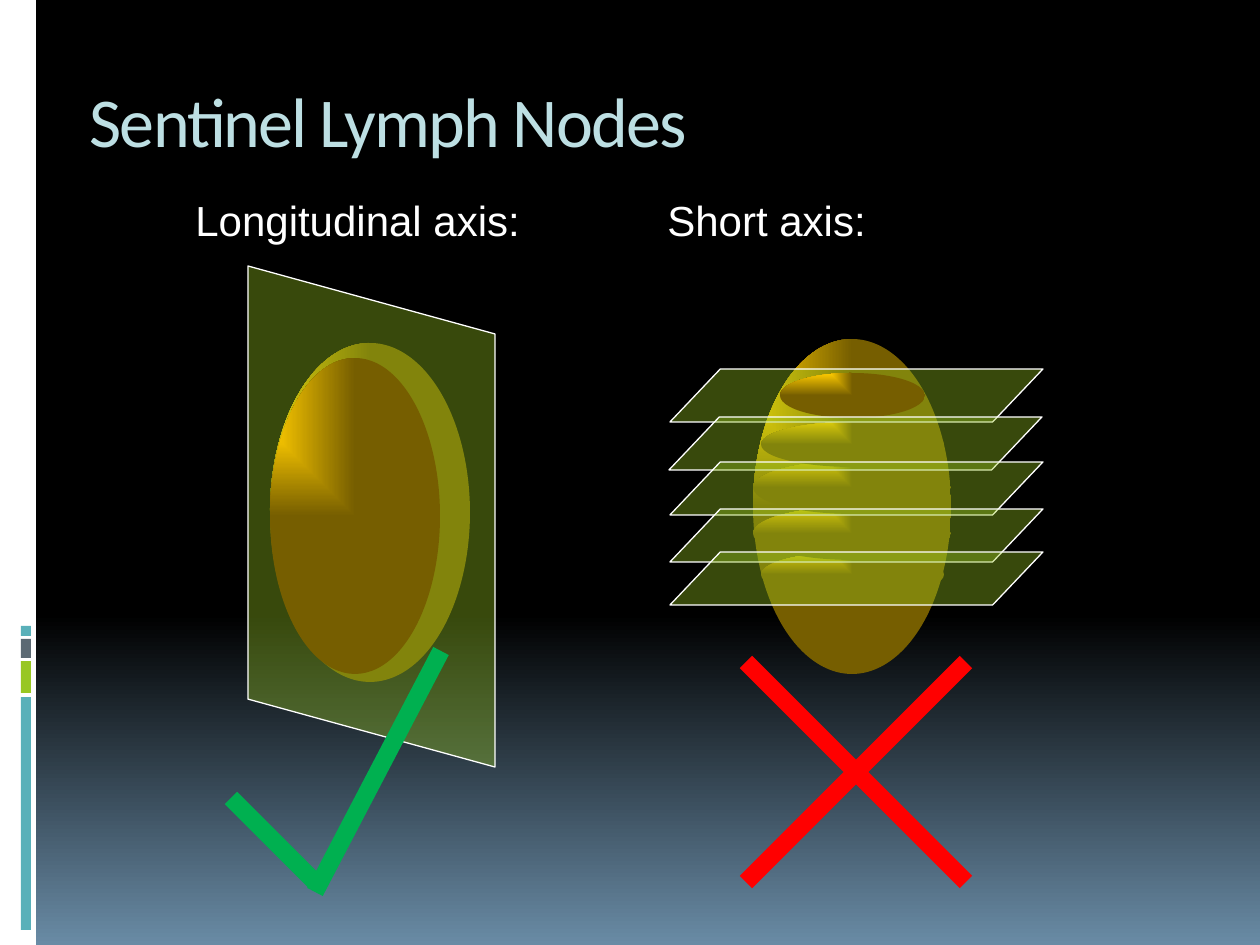
import lxml.etree
import pptx
import pptx.dml.color
import pptx.enum.shapes
import pptx.enum.text
import pptx.oxml.ns
import pptx.util

SCALE = 914400 / 126
SHAPE = pptx.enum.shapes.MSO_SHAPE
ANCHOR = pptx.enum.text.MSO_ANCHOR
AUTO_SIZE = pptx.enum.text.MSO_AUTO_SIZE
qn = pptx.oxml.ns.qn

WHITE, TITLE = "FFFFFF", "BDDFE3"
TEAL, GREEN, GREY = "59B0B9", "98C723", "5B6973"
TICK, CROSS = "00B050", "FF0000"
NODE_STOPS = [(0, "FFCC00"), (100, "765E00")]
SKY_STOPS = [(0, "000000"), (65, "000000"), (100, "698BA5")]


def px(*lengths):
    return [pptx.util.Emu(round(length * SCALE)) for length in lengths]


def colour(value):
    return pptx.dml.color.RGBColor.from_string(value)


def child(parent, tag, **attributes):
    values = {key: str(value) for key, value in attributes.items()}
    return lxml.etree.SubElement(parent, qn(tag), values)


class SlideBuilder:
    """Holds the style and the current slide, and draws each kind of element."""

    def __init__(self, presentation):
        self.slide = presentation.slides.add_slide(presentation.slide_layouts[5])
        self.shapes = self.slide.shapes

    def gradient(self, fill, owner, stops):
        fill.gradient()
        gradient = owner.find(".//" + qn("a:gradFill"))
        for part in list(gradient):
            gradient.remove(part)
        stop_list = child(gradient, "a:gsLst")
        for position, value in stops:
            stop = child(stop_list, "a:gs", pos=position * 1000)
            child(stop, "a:srgbClr", val=value)
        return gradient

    def background(self, stops):
        gradient = self.gradient(self.slide.background.fill, self.slide.element, stops)
        child(gradient, "a:lin", ang=5400000, scaled=0)

    def shape(self, kind, *frame):
        shape = self.shapes.add_shape(kind, *px(*frame))
        shape.shadow.inherit = False
        shape.line.fill.background()
        return shape

    def bar(self, *frame, fill):
        bar = self.shape(SHAPE.RECTANGLE, *frame)
        bar.fill.solid()
        bar.fill.fore_color.rgb = colour(fill)

    def node(self, *frame):
        node = self.shape(SHAPE.OVAL, *frame)
        gradient = self.gradient(node.fill, node.element, NODE_STOPS)
        shading = child(gradient, "a:path", path="rect")
        child(shading, "a:fillToRect", r=100000, b=100000)

    def plane(self, *frame, slant, rotation=0):
        plane = self.shape(SHAPE.PARALLELOGRAM, *frame)
        plane.adjustments[0] = slant
        plane.rotation = rotation
        plane.fill.solid()
        plane.fill.fore_color.rgb = colour(GREEN)
        child(plane.element.find(".//" + qn("a:srgbClr")), "a:alpha", val=37000)
        plane.line.color.rgb = colour(WHITE)
        plane.line.width = pptx.util.Pt(0.75)

    def stroke(self, *ends, fill):
        stroke = self.shapes.add_connector(
            pptx.enum.shapes.MSO_CONNECTOR.STRAIGHT, *px(*ends))
        stroke.line.color.rgb = colour(fill)
        stroke.line.width = pptx.util.Pt(10)
        child(stroke.element.spPr, "a:effectLst")

    def text(self, frame, wording, font, size, fill):
        paragraph = frame.paragraphs[0]
        paragraph.alignment = pptx.enum.text.PP_ALIGN.LEFT
        run = paragraph.add_run()
        run.text = wording
        run.font.name = font
        run.font.size = pptx.util.Pt(size)
        run.font.color.rgb = colour(fill)

    def title(self, wording, *frame):
        title = self.slide.shapes.title
        title.left, title.top, title.width, title.height = px(*frame)
        title.text_frame.vertical_anchor = ANCHOR.TOP
        title.text_frame.auto_size = AUTO_SIZE.NONE
        self.text(title.text_frame, wording, "Calibri", 40, TITLE)
        title.element.find(".//" + qn("a:rPr")).set("spc", "-100")

    def label(self, wording, *frame):
        label = self.shapes.add_textbox(*px(*frame)).text_frame
        label.word_wrap = False
        label.auto_size = AUTO_SIZE.SHAPE_TO_FIT_TEXT
        self.text(label, wording, "Arial", 24, WHITE)


def main():
    presentation = pptx.Presentation()
    presentation.slide_width, presentation.slide_height = px(1260, 945)
    builder = SlideBuilder(presentation)
    builder.background(SKY_STOPS)
    builder.title("Sentinel Lymph Nodes", 77, 71, 1120, 126)

    builder.bar(0, 0, 36, 945, fill=WHITE)
    for top, height, fill in [(697, 233, TEAL), (661, 32, GREEN),
                              (639, 19, GREY), (626, 10, TEAL)]:
        builder.bar(21, top, 10, height, fill=fill)

    builder.shapes = builder.slide.shapes.add_group_shape().shapes
    builder.node(270, 343, 200, 339)
    builder.plane(121, 393, 501, 247, slant=0.275, rotation=270)
    builder.node(270, 358, 170, 316)
    builder.shapes = builder.slide.shapes

    builder.node(753, 339, 198, 335)
    for left, top, width, height in [(761, 552, 183, 45), (753, 507, 198, 53),
                                     (753, 461, 198, 53), (761, 422, 183, 45)]:
        builder.node(left, top, width, height)
    builder.plane(670, 369, 373, 53, slant=0.95)
    builder.node(780, 373, 145, 45)
    for left, top in [(669, 417), (670, 462), (670, 509), (670, 552)]:
        builder.plane(left, top, 373, 53, slant=0.95)

    builder.stroke(231, 798, 315, 882, fill=TICK)
    builder.stroke(315, 892, 441, 651, fill=TICK)
    builder.stroke(746, 662, 966, 882, fill=CROSS)
    builder.stroke(746, 882, 966, 662, fill=CROSS)

    builder.label("Longitudinal axis:", 183, 188, 350, 63)
    builder.label("Short axis:", 655, 188, 224, 63)
    presentation.save("out.pptx")


if __name__ == "__main__":
    main()
